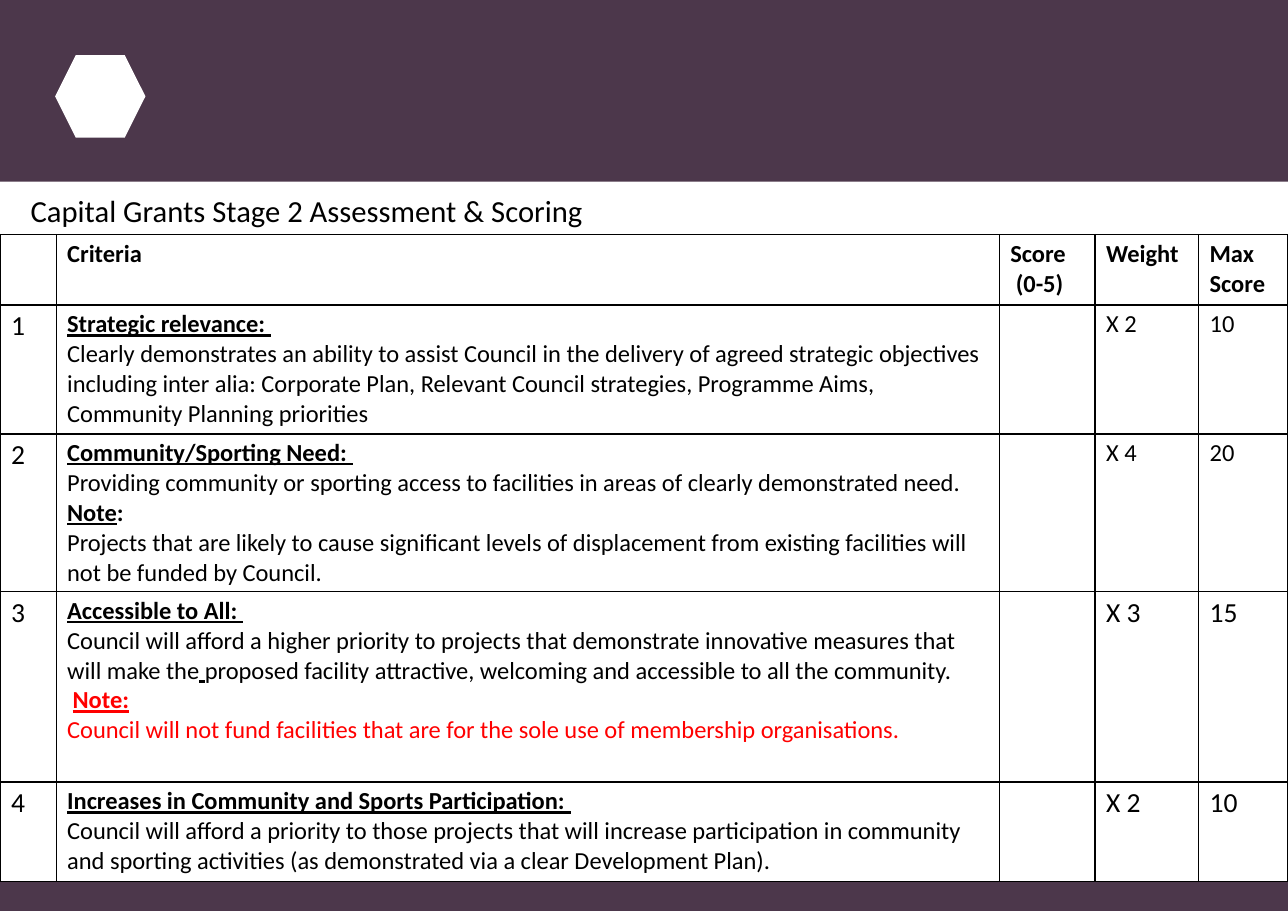
from lxml.etree import SubElement
from pptx import Presentation
from pptx.dml.color import RGBColor
from pptx.enum.shapes import MSO_SHAPE
from pptx.oxml.ns import qn
from pptx.util import Inches, Pt

PLUM = RGBColor(0x4C, 0x37, 0x4B)
WHITE = RGBColor(0xFF, 0xFF, 0xFF)
BLACK = RGBColor(0, 0, 0)
RED = RGBColor(0xFF, 0, 0)
FONT = "Calibri"
WIDTH, HEIGHT = 11.69, 8.27

TITLE = "Capital Grants Stage 2 Assessment & Scoring"
HEADINGS = ["", "Criteria", "Score\n (0-5)", "Weight", "Max Score"]
COLUMN_WIDTHS = [0.51, 8.56, 0.87, 0.94, 0.81]
ROW_HEIGHTS = [0.64, 1.17, 1.43, 1.73, 0.9]

# Style letters: b bold, u underlined, r red
# Each criterion: paragraphs of (text, style) runs, weight, maximum score, size of both
CRITERIA = [
    ([[("Strategic relevance: ", "bu")],
      [("Clearly demonstrates an ability to assist Council in the delivery of agreed "
        "strategic objectives including inter alia: Corporate Plan, Relevant Council "
        "strategies, Programme Aims, Community Planning priorities", "")]],
     "X 2", "10", 16),
    ([[("Community/Sporting Need: ", "bu")],
      [("Providing community or sporting access to facilities in areas of clearly "
        "demonstrated need.", "")],
      [("Note", "bu"), (":", "b")],
      [("Projects that are likely to cause significant levels of displacement from "
        "existing facilities will not be funded by Council.", "")]],
     "X 4", "20", 16),
    ([[("Accessible to All: ", "bu")],
      [("Council will afford a higher priority to projects that demonstrate innovative "
        "measures that will make the", ""), (" ", "u"),
       ("proposed facility attractive, welcoming and accessible to all the community.", "")],
      [(" ", ""), ("Note:", "bur")],
      [("Council will not fund facilities that are for the sole use of membership "
        "organisations.", "r")]],
     "X 3", "15", 18),
    ([[("Increases in Community and Sports Participation: ", "bu")],
      [("Council will afford a priority to those projects that will increase participation "
        "in community and sporting activities (as demonstrated via a clear Development "
        "Plan).", "")]],
     "X 2", "10", 18),
]


def plain(text, style=""):
    """Turn text into one single-run paragraph per line."""
    return [[(line, style)] for line in text.split("\n")]


def write(text_frame, paragraphs, size):
    for index, runs in enumerate(paragraphs):
        paragraph = text_frame.add_paragraph() if index else text_frame.paragraphs[0]
        for text, style in runs:
            run = paragraph.add_run()
            run.text = text
            font = run.font
            font.name, font.size = FONT, Pt(size)
            font.bold = "b" in style
            font.underline = "u" in style
            font.color.rgb = RED if "r" in style else BLACK


def add_filled(slide, preset, left, top, width, height, color):
    shape = slide.shapes.add_shape(
        preset, Inches(left), Inches(top), Inches(width), Inches(height))
    shape.shadow.inherit = False
    shape.fill.solid()
    shape.fill.fore_color.rgb = color
    shape.line.fill.background()


def format_cell(cell):
    cell.margin_top = cell.margin_bottom = Inches(0.04)
    properties = cell._tc.get_or_add_tcPr()
    for side in ("a:lnL", "a:lnR", "a:lnT", "a:lnB"):
        border = SubElement(properties, qn(side), w=str(Pt(1)))
        fill = SubElement(border, qn("a:solidFill"))
        SubElement(fill, qn("a:srgbClr"), val=str(BLACK))
    cell.fill.solid()
    cell.fill.fore_color.rgb = WHITE


def add_criteria_table(slide):
    rows = [[(plain(heading, "b") if heading else [], 16) for heading in HEADINGS]]
    for number, (description, weight, maximum, size) in enumerate(CRITERIA, 1):
        rows.append([(plain(str(number)), 18), (description, 16), ([], 16),
                     (plain(weight), size), (plain(maximum), size)])
    table = slide.shapes.add_table(
        len(rows), len(HEADINGS), Inches(0), Inches(2.13),
        Inches(WIDTH), Inches(sum(ROW_HEIGHTS))).table
    for column, width in zip(table.columns, COLUMN_WIDTHS):
        column.width = Inches(width)
    for table_row, height, contents in zip(table.rows, ROW_HEIGHTS, rows):
        table_row.height = Inches(height)
        for cell, (paragraphs, size) in zip(table_row.cells, contents):
            format_cell(cell)
            write(cell.text_frame, paragraphs, size)


def main():
    presentation = Presentation()
    presentation.slide_width = Inches(WIDTH)
    presentation.slide_height = Inches(HEIGHT)
    slide = presentation.slides.add_slide(presentation.slide_layouts[6])

    add_filled(slide, MSO_SHAPE.RECTANGLE, 0, 0, WIDTH, 1.65, PLUM)
    add_filled(slide, MSO_SHAPE.HEXAGON, 0.5, 0.5, 0.82, 0.75, WHITE)
    add_filled(slide, MSO_SHAPE.RECTANGLE, 0, 7.67, WIDTH, HEIGHT - 7.67, PLUM)

    title = slide.shapes.add_textbox(Inches(0.18), Inches(1.69), Inches(5.27), Inches(0.44))
    title.text_frame.word_wrap = False
    write(title.text_frame, plain(TITLE), 20)

    add_criteria_table(slide)
    presentation.save("out.pptx")


if __name__ == "__main__":
    main()
